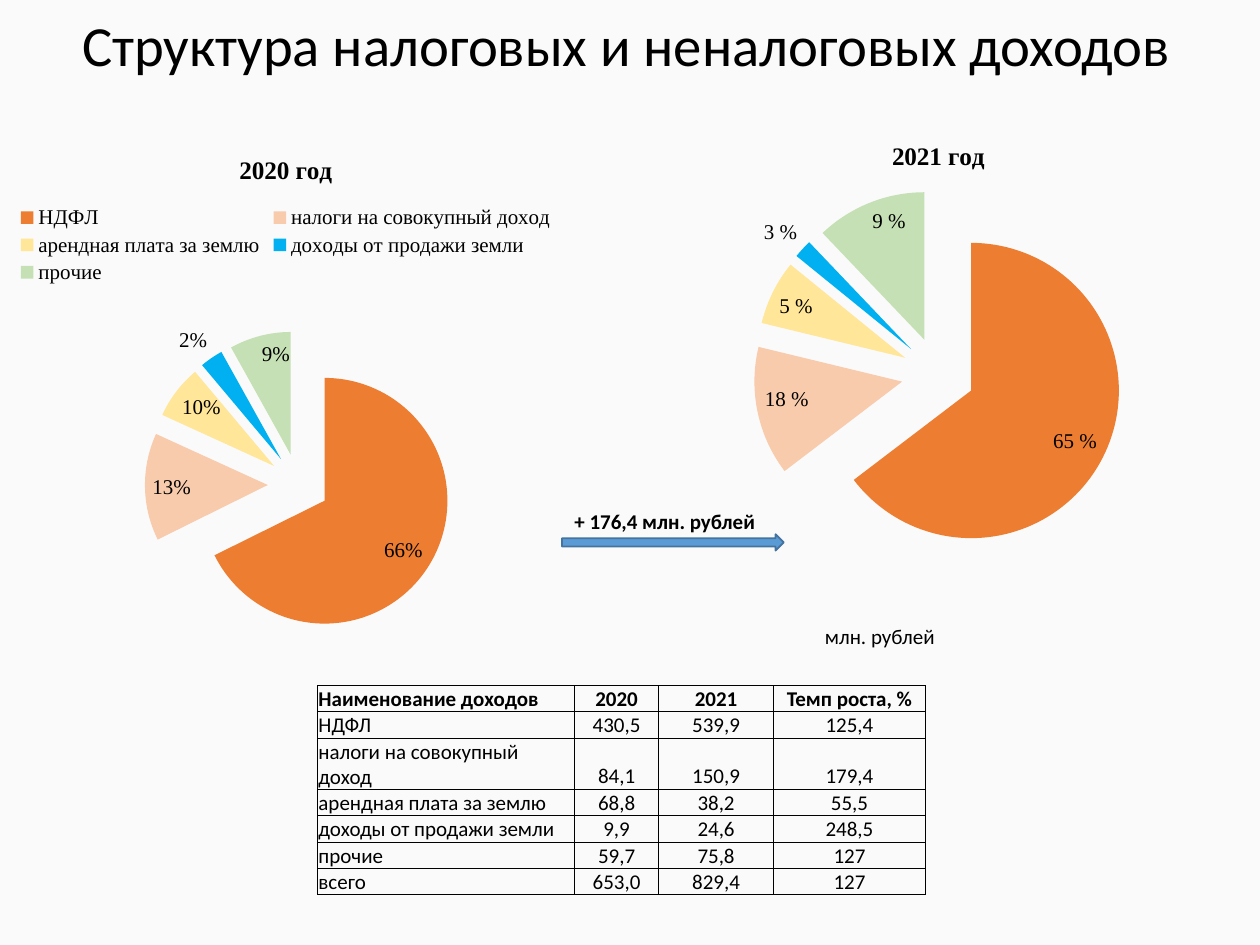
from dataclasses import dataclass
from typing import Optional

from lxml.etree import SubElement
from pptx import Presentation
from pptx.chart.data import CategoryChartData
from pptx.dml.color import RGBColor
from pptx.enum.chart import XL_CHART_TYPE as ChartType
from pptx.enum.chart import XL_LABEL_POSITION as LabelPos
from pptx.enum.chart import XL_LEGEND_POSITION as LegendPos
from pptx.enum.shapes import MSO_SHAPE as Shape
from pptx.enum.text import MSO_ANCHOR as Anchor
from pptx.enum.text import PP_ALIGN as Align
from pptx.oxml import parse_xml
from pptx.oxml.ns import nsdecls, qn
from pptx.util import Cm, Pt

BLACK = RGBColor(0x00, 0x00, 0x00)
BACKGROUND = RGBColor(0xFA, 0xFA, 0xFA)
ARROW_FILL = RGBColor(0x5B, 0x9B, 0xD5)
ARROW_LINE = RGBColor(0x43, 0x73, 0x9E)
SLICE_COLORS = [
    RGBColor(0xED, 0x7D, 0x31),
    RGBColor(0xF8, 0xCB, 0xAD),
    RGBColor(0xFF, 0xE6, 0x99),
    RGBColor(0x00, 0xB0, 0xF0),
    RGBColor(0xC5, 0xE0, 0xB4),
]
LAND_SALES = 3
EXPLOSION = 25
SANS = "Calibri"
SERIF = "Times New Roman"


@dataclass
class Box:
    left: float
    top: float
    width: float
    height: float

    def cm(self) -> tuple:
        return Cm(self.left), Cm(self.top), Cm(self.width), Cm(self.height)


@dataclass
class Label:
    text: str
    box: Box
    size: float = 12
    bold: bool = False
    align: Align = Align.LEFT
    spacing: Optional[float] = None


@dataclass
class Pie:
    title: str
    box: Box
    categories: list
    values: list
    labels: list
    plot: Box
    legend: bool = False


LABELS = [
    Label("Структура налоговых и неналоговых доходов",
          Box(0.84, 0.05, 23.57, 1.83), 32.4, align=Align.CENTER, spacing=0.9),
    Label("+ 176,4 млн. рублей", Box(11.33, 10.13, 5.05, 0.76), bold=True),
    Label("млн. рублей", Box(16.38, 12.45, 2.92, 0.76)),
]
PIES = [
    Pie("2020 год", Box(-0.69, 2.67, 12.9, 10.52),
        ["НДФЛ", "налоги на совокупный доход", "арендная плата за землю",
         "доходы от продажи земли", "прочие"],
        [67, 14, 7, 3, 8], ["66%", "13%", "10%", "2%", "9%"],
        Box(0.28, 0.38, 0.48, 0.59), legend=True),
    Pie("2021 год", Box(12.78, 2.41, 12.27, 9.42),
        ["1", "2", "3", "4", "5"],
        [64, 14, 7, 2, 12], ["65 %", "18 %", "5 %", "3 %", "9 %"],
        Box(0.05, 0.15, 0.9, 0.79)),
]
COLUMN_WIDTHS = [5.18, 1.7, 2.31, 3.07]
ROW_HEIGHT = 0.53
INCOME_ROWS = [
    ["Наименование доходов", "2020", "2021", "Темп роста, %"],
    ["НДФЛ", "430,5", "539,9", "125,4"],
    ["налоги на совокупный доход", "84,1", "150,9", "179,4"],
    ["арендная плата за землю", "68,8", "38,2", "55,5"],
    ["доходы от продажи земли", "9,9", "24,6", "248,5"],
    ["прочие", "59,7", "75,8", "127"],
    ["всего", "653,0", "829,4", "127"],
]


def style_font(font, size: float, name: str, bold: bool = False) -> None:
    font.size = Pt(size)
    font.name = name
    font.bold = bold
    font.color.rgb = BLACK


def add_run(p, text: str, size: float, name: str, bold: bool = False) -> None:
    r = p.add_run()
    r.text = text
    style_font(r.font, size, name, bold)


def add_label(s, label: Label) -> None:
    tf = s.shapes.add_textbox(*label.box.cm()).text_frame
    tf.word_wrap = True
    tf.vertical_anchor = Anchor.MIDDLE
    p = tf.paragraphs[0]
    p.alignment = label.align
    p.line_spacing = label.spacing
    add_run(p, label.text, label.size, SANS, label.bold)


def set_plot_layout(chart, plot: Box) -> None:
    area = chart._chartSpace.chart.plotArea
    for old in area.findall(qn("c:layout")):
        area.remove(old)
    layout = parse_xml(
        f'<c:layout {nsdecls("c")}><c:manualLayout><c:layoutTarget val="inner"/>'
        '<c:xMode val="edge"/><c:yMode val="edge"/>'
        f'<c:x val="{plot.left}"/><c:y val="{plot.top}"/>'
        f'<c:w val="{plot.width}"/><c:h val="{plot.height}"/>'
        "</c:manualLayout></c:layout>")
    area.insert(0, layout)


def explode(series) -> None:
    ser = series._element
    slices = ser.findall(qn("c:dPt"))
    followers = [slices[0]] + [sl.find(qn("c:spPr")) for sl in slices]
    for follower in followers:
        explosion = SubElement(ser, qn("c:explosion"), val=str(EXPLOSION))
        follower.addprevious(explosion)


def add_pie(s, pie: Pie) -> None:
    data = CategoryChartData(number_format="#,##0.0")
    data.categories = pie.categories
    data.add_series("Series 1", pie.values)
    chart = s.shapes.add_chart(ChartType.PIE, *pie.box.cm(), data).chart
    style_font(chart.font, 12, SERIF)
    chart.has_title = True
    add_run(chart.chart_title.text_frame.paragraphs[0], pie.title, 14.4, SERIF, True)
    chart.chart_title.include_in_layout = False
    chart.has_legend = pie.legend
    if pie.legend:
        chart.legend.position = LegendPos.TOP
        chart.legend.include_in_layout = False
        style_font(chart.legend.font, 12, SERIF)
    set_plot_layout(chart, pie.plot)

    plot = chart.plots[0]
    plot.vary_by_categories = True
    series = plot.series[0]
    series.data_labels.show_percentage = True
    series.data_labels.show_value = False
    for i, (color, text) in enumerate(zip(SLICE_COLORS, pie.labels)):
        point = series.points[i]
        point.format.fill.solid()
        point.format.fill.fore_color.rgb = color
        point.format.line.fill.background()
        label = point.data_label
        add_run(label.text_frame.paragraphs[0], text, 12, SERIF)
        label.position = LabelPos.OUTSIDE_END if i == LAND_SALES else LabelPos.INSIDE_END
    explode(series)


def add_arrow(s, box: Box) -> None:
    sp = s.shapes.add_shape(Shape.RIGHT_ARROW, *box.cm())
    sp.shadow.inherit = False
    sp.fill.solid()
    sp.fill.fore_color.rgb = ARROW_FILL
    sp.line.color.rgb = ARROW_LINE
    sp.line.width = Pt(1)


def add_borders(cell) -> None:
    tc_pr = cell._tc.get_or_add_tcPr()
    for i, side in enumerate(("lnL", "lnR", "lnT", "lnB")):
        tc_pr.insert(i, parse_xml(
            f'<a:{side} {nsdecls("a")} w="{Pt(0.5)}"><a:solidFill>'
            f'<a:srgbClr val="{BLACK}"/></a:solidFill></a:{side}>'))


def add_income_table(s, left: float, top: float) -> None:
    box = Box(left, top, sum(COLUMN_WIDTHS), ROW_HEIGHT * len(INCOME_ROWS))
    table = s.shapes.add_table(len(INCOME_ROWS), len(COLUMN_WIDTHS), *box.cm()).table
    table.first_row = table.horz_banding = False
    for column, width in zip(table.columns, COLUMN_WIDTHS):
        column.width = Cm(width)
    for i, row in enumerate(INCOME_ROWS):
        table.rows[i].height = Cm(ROW_HEIGHT)
        for j, text in enumerate(row):
            cell = table.cell(i, j)
            cell.fill.background()
            cell.vertical_anchor = Anchor.BOTTOM
            cell.margin_left = cell.margin_right = cell.margin_top = Cm(0.02)
            cell.margin_bottom = Cm(0)
            p = cell.text_frame.paragraphs[0]
            p.alignment = Align.CENTER if j else Align.LEFT
            add_run(p, text, 12, SANS, bold=i == 0)
            add_borders(cell)


def main() -> None:
    prs = Presentation()
    prs.slide_width, prs.slide_height = Cm(25.4), Cm(19.05)
    s = prs.slides.add_slide(prs.slide_layouts[6])
    s.background.fill.solid()
    s.background.fill.fore_color.rgb = BACKGROUND
    for pie in PIES:
        add_pie(s, pie)
    add_arrow(s, Box(11.33, 10.77, 4.47, 0.33))
    for label in LABELS:
        add_label(s, label)
    add_income_table(s, 6.4, 13.82)
    prs.save("out.pptx")


if __name__ == "__main__":
    main()
